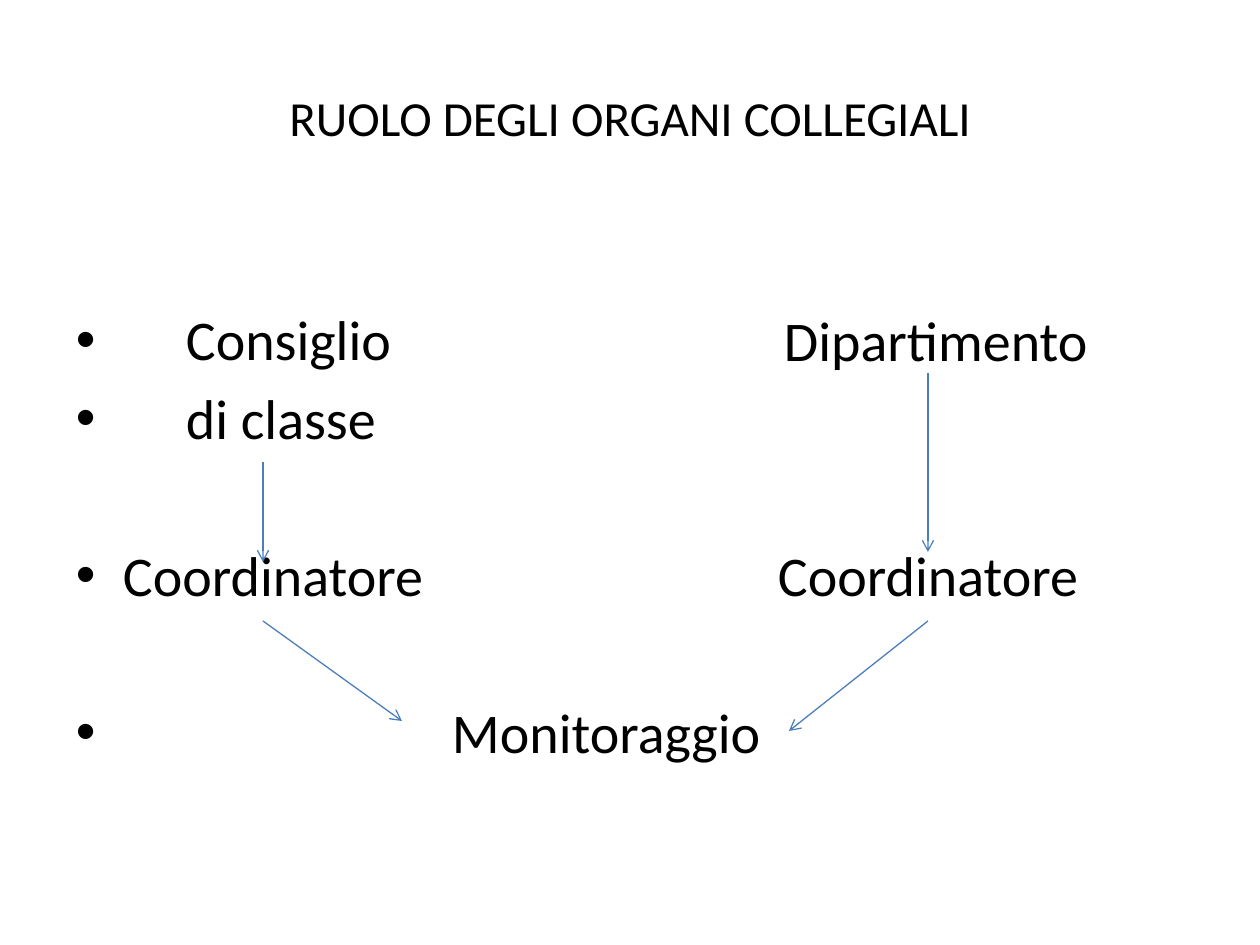
from lxml.etree import SubElement
from pptx import Presentation
from pptx.dml.color import RGBColor
from pptx.enum.shapes import MSO_CONNECTOR
from pptx.enum.text import MSO_ANCHOR, PP_ALIGN
from pptx.oxml.ns import qn
from pptx.util import Emu, Pt

SCALE = 914400 // 126
COLORS = {"text": "000000", "arrow": "4B7EBC"}
FONT = "Calibri"
LINE_PX = 78
BODY_PT = 32
INSET_X, INSET_Y = 13, 6

# text, left indent in px, space before in pt
BODY = [
    ("Consiglio", 110, 0),
    ("di classe", 110, 6.4),
    ("Coordinatore", 47, 51.2),
    ("Monitoraggio", 376, 51.2),
]
# text, left, lines below the first one
RIGHT_COLUMN = [("Dipartimento", 784, 0), ("Coordinatore", 778, 3)]
RIGHT_TOP = 306

ARROWS = [
    (263, 462, 263, 562),
    (928, 373, 928, 552),
    (263, 621, 402, 721),
    (928, 621, 789, 731),
]


def px(n):
    return Emu(n * SCALE)


def add_box(s, x, y, w, h, inset_x=0, inset_y=0):
    tf = s.shapes.add_textbox(px(x), px(y), px(w), px(h)).text_frame
    tf.word_wrap = True
    tf.margin_left = tf.margin_right = px(inset_x)
    tf.margin_top = tf.margin_bottom = px(inset_y)
    return tf


def add_run(p, text, size):
    r = p.add_run()
    r.text = text
    r.font.name = FONT
    r.font.size = Pt(size)
    r.font.color.rgb = RGBColor.from_string(COLORS["text"])


def set_bullet(p, indent):
    """Hang the bullet at the left edge, with the text at the indent."""
    pPr = p._p.get_or_add_pPr()
    pPr.set("marL", str(px(indent)))
    pPr.set("indent", str(-px(indent)))
    SubElement(pPr, qn("a:buFont"), typeface="Arial")
    SubElement(pPr, qn("a:buChar"), char="•")


def add_title(s, text):
    tf = add_box(s, 63, 38, 1134, 158, INSET_X, INSET_Y)
    tf.vertical_anchor = MSO_ANCHOR.MIDDLE
    p = tf.paragraphs[0]
    p.alignment = PP_ALIGN.CENTER
    add_run(p, text, 28)


def add_body(s):
    tf = add_box(s, 63, 221, 1134, 624, INSET_X, INSET_Y)
    tf.margin_top = px(INSET_Y + LINE_PX)
    for i, (text, indent, before) in enumerate(BODY):
        p = tf.add_paragraph() if i else tf.paragraphs[0]
        p.space_before = Pt(before)
        set_bullet(p, indent)
        add_run(p, text, BODY_PT)


def add_right_column(s):
    for text, x, line in RIGHT_COLUMN:
        tf = add_box(s, x, RIGHT_TOP + line * LINE_PX, 350, 68)
        add_run(tf.paragraphs[0], text, BODY_PT)


def add_arrow(s, x1, y1, x2, y2):
    c = s.shapes.add_connector(MSO_CONNECTOR.STRAIGHT,
                               px(x1), px(y1), px(x2), px(y2))
    c.line.color.rgb = RGBColor.from_string(COLORS["arrow"])
    c.line.width = Pt(0.75)
    SubElement(c.line._get_or_add_ln(), qn("a:tailEnd"), type="arrow")
    SubElement(c._element.spPr, qn("a:effectLst"))


def main():
    prs = Presentation()
    prs.slide_width, prs.slide_height = px(1260), px(945)
    s = prs.slides.add_slide(prs.slide_layouts[6])
    add_title(s, "RUOLO DEGLI ORGANI COLLEGIALI")
    add_body(s)
    add_right_column(s)
    for arrow in ARROWS:
        add_arrow(s, *arrow)
    prs.save("out.pptx")


if __name__ == "__main__":
    main()
